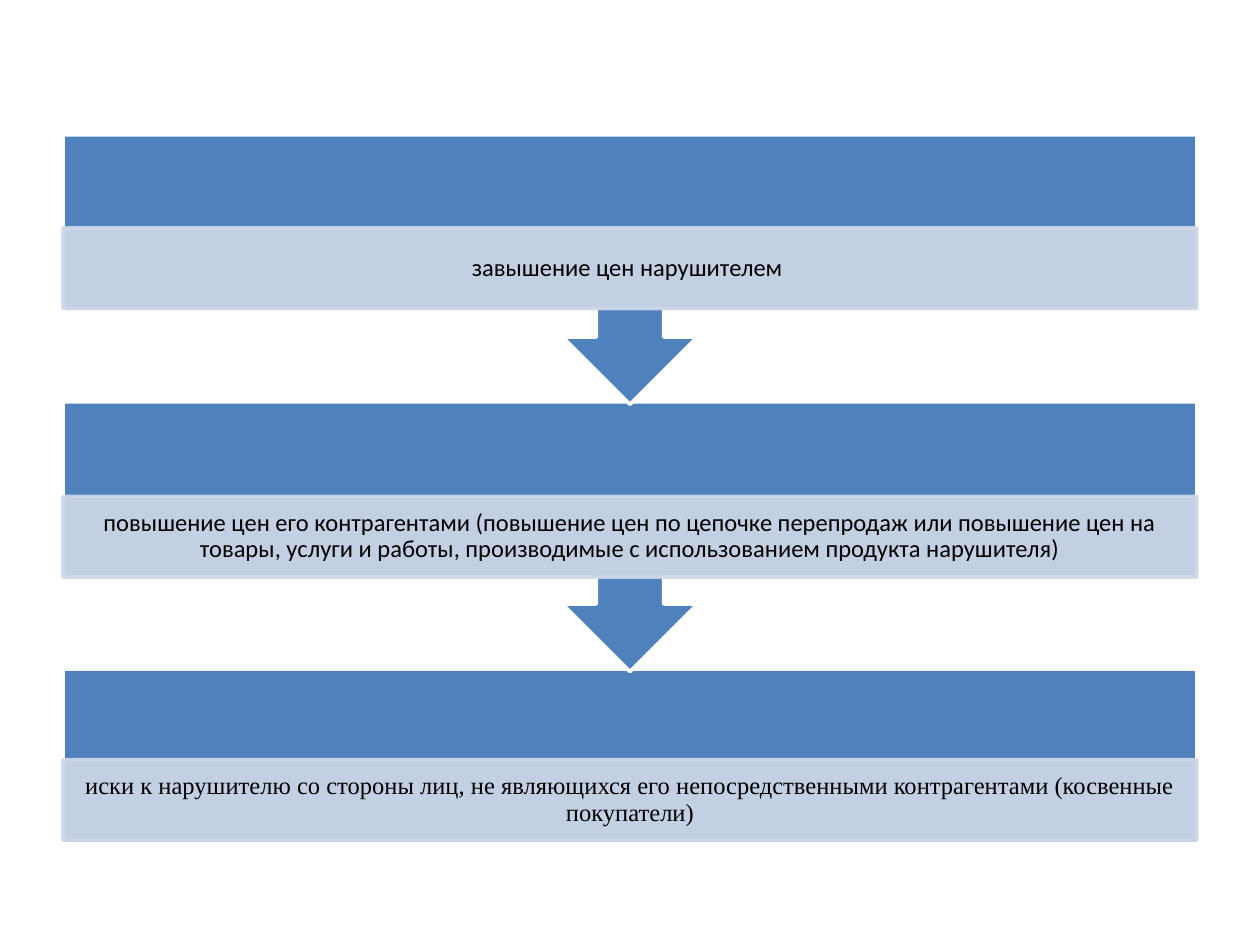
from lxml.etree import SubElement
from pptx import Presentation
from pptx.dml.color import RGBColor
from pptx.enum.shapes import MSO_SHAPE as SHAPE
from pptx.enum.text import MSO_ANCHOR as ANCHOR, PP_ALIGN as ALIGN
from pptx.oxml.ns import qn
from pptx.util import Inches, Pt

BLUE = RGBColor(0x4F, 0x81, 0xBD)
PALE = RGBColor(0xD0, 0xD8, 0xE8)
WHITE = RGBColor(0xFF, 0xFF, 0xFF)
BLACK = RGBColor(0, 0, 0)

LEFT, WIDTH = 0.5, 9
STEP_TOP, STEP_PITCH = 1.07, 2.12
CALLOUT_HEIGHT, LAST_HEIGHT = 2.14, 1.39
PANEL_HEIGHT = 0.64

STEPS = [
    ("завышение цен нарушителем ", "Calibri", 1.81),
    ("повышение цен его контрагентами (повышение цен по цепочке перепродаж "
     "или повышение цен на товары, услуги и работы, производимые "
     "с использованием продукта нарушителя)", "Calibri", 3.94),
    ("иски к нарушителю со стороны лиц, не являющихся его непосредственными "
     "контрагентами (косвенные покупатели)", "Times New Roman", 6.03),
]


def add_block(slide, kind, top, height, fill, line):
    block = slide.shapes.add_shape(
        kind, Inches(LEFT), Inches(top), Inches(WIDTH), Inches(height))
    block.shadow.inherit = False
    block.fill.solid()
    block.fill.fore_color.rgb = fill
    block.line.color.rgb = line
    block.line.width = Pt(2)
    return block


def set_opacity(block, percent):
    for color in block._element.spPr.iter(qn("a:srgbClr")):
        SubElement(color, qn("a:alpha"), val=str(percent * 1000))


def add_panel(slide, top, wording, font_name):
    panel = add_block(slide, SHAPE.RECTANGLE, top, PANEL_HEIGHT, PALE, PALE)
    set_opacity(panel, 90)
    frame = panel.text_frame
    frame.word_wrap = True
    frame.vertical_anchor = ANCHOR.MIDDLE
    frame.margin_left = frame.margin_right = Inches(0.11)
    frame.margin_top = frame.margin_bottom = Inches(0.02)
    paragraph = frame.paragraphs[0]
    paragraph.text = wording
    paragraph.alignment = ALIGN.CENTER
    paragraph.line_spacing = 0.9
    paragraph.font.name = font_name
    paragraph.font.size = Pt(14)
    paragraph.font.color.rgb = BLACK


def add_step(slide, index):
    wording, font_name, panel_top = STEPS[index]
    top = STEP_TOP + index * STEP_PITCH
    if index == len(STEPS) - 1:
        add_block(slide, SHAPE.RECTANGLE, top, LAST_HEIGHT, BLUE, WHITE)
    else:
        callout = add_block(
            slide, SHAPE.UP_ARROW_CALLOUT, top, CALLOUT_HEIGHT, BLUE, WHITE)
        callout.rotation = 180
    add_panel(slide, panel_top, wording, font_name)


def main():
    deck = Presentation()
    deck.slide_width = Inches(10)
    deck.slide_height = Inches(7.5)
    slide = deck.slides.add_slide(deck.slide_layouts[6])
    for index in reversed(range(len(STEPS))):
        add_step(slide, index)
    deck.save("out.pptx")


if __name__ == "__main__":
    main()
